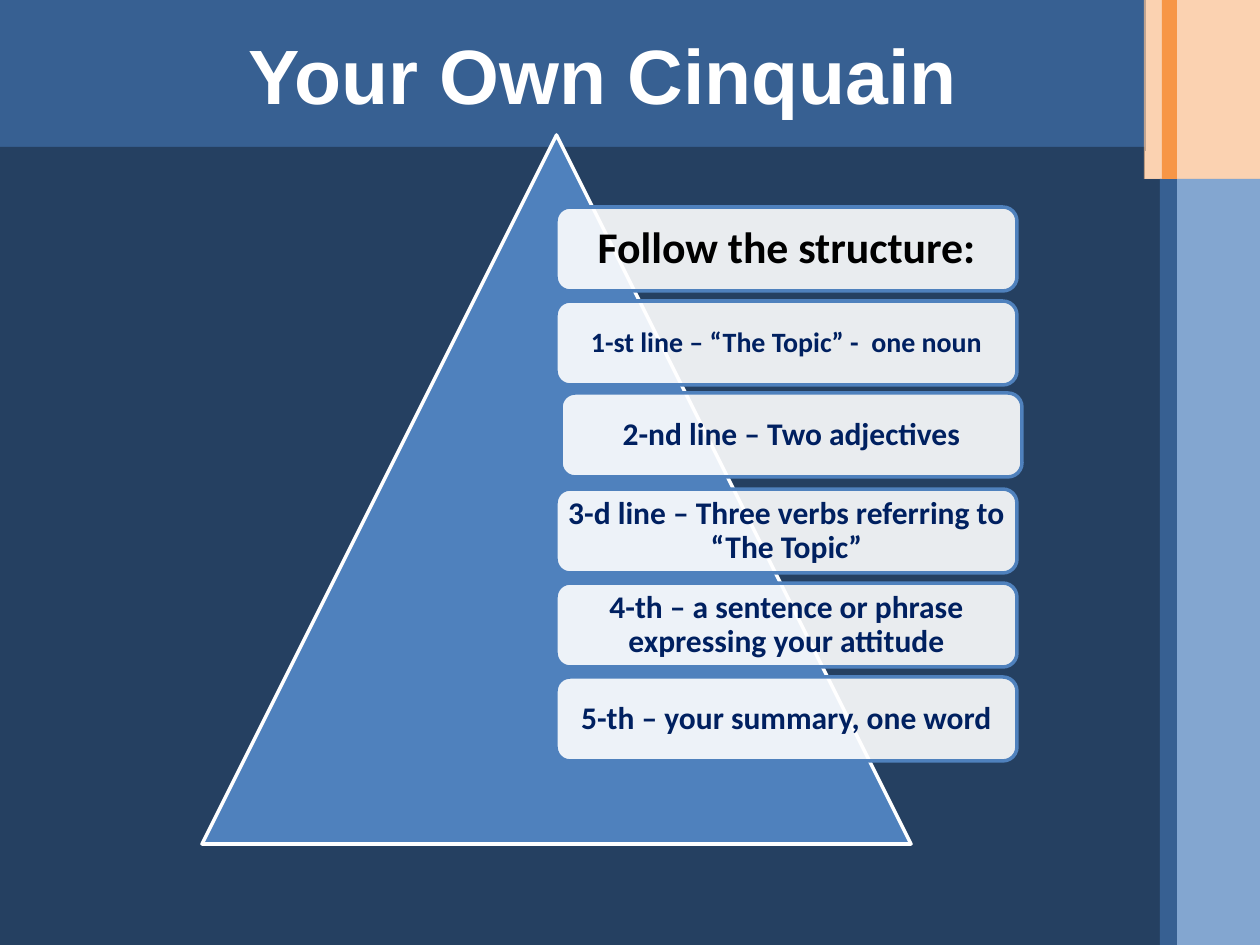
from dataclasses import dataclass

from lxml.etree import SubElement
from pptx import Presentation
from pptx.dml.color import RGBColor
from pptx.enum.shapes import MSO_SHAPE
from pptx.enum.text import MSO_ANCHOR, PP_ALIGN
from pptx.oxml.ns import qn
from pptx.util import Pt

EMU_PER_PX = 914400 / 126


@dataclass(frozen=True)
class Theme:
    navy: str = "254061"
    blue: str = "376092"
    accent: str = "4F81BD"
    peach: str = "FAC090"
    orange: str = "F79646"
    white: str = "FFFFFF"
    black: str = "000000"
    ink: str = "002060"
    title_font: str = "Arial"
    body_font: str = "Calibri"
    title_size: int = 44
    heading_size: int = 25
    body_size: int = 18
    small_size: int = 16
    line_width: int = 2


THEME = Theme()


@dataclass(frozen=True)
class Box:
    left: int
    top: int
    width: int
    height: int

    def emu(self) -> list[int]:
        return [px(v) for v in (self.left, self.top, self.width, self.height)]


@dataclass(frozen=True)
class Panel:
    box: Box
    fill: str
    opacity: int = 100


@dataclass(frozen=True)
class Card:
    text: str
    size: int = THEME.body_size
    color: str = THEME.ink
    dx: int = 0
    dy: int = 0


PANELS = [
    Panel(Box(0, 0, 1146, 151), THEME.blue),
    Panel(Box(0, 147, 1145, 798), THEME.navy),
    Panel(Box(1138, 179, 23, 766), THEME.navy),
    Panel(Box(1144, 0, 116, 179), THEME.peach, 70),
    Panel(Box(1177, 179, 83, 766), THEME.accent, 70),
    Panel(Box(1160, 179, 17, 766), THEME.blue),
    Panel(Box(1162, 0, 15, 179), THEME.orange),
]

TITLE_BOX = Box(63, 0, 1081, 147)
PYRAMID = Box(202, 135, 709, 709)
FIRST_CARD = Box(556, 207, 461, 84)
CARD_PITCH = 94
CARD_INSET = 5

CARDS = [
    Card("Follow the structure:", THEME.heading_size, THEME.black),
    Card("1-st line – “The Topic” -  one noun", THEME.small_size),
    Card("2-nd line – Two adjectives", dx=5, dy=-2),
    Card("3-d line – Three verbs referring to “The Topic”"),
    Card("4-th – a sentence or phrase expressing your attitude"),
    Card("5-th – your summary, one word"),
]


def px(value: int) -> int:
    return round(value * EMU_PER_PX)


def add_filled(slide, kind, box: Box, fill: str, opacity: int = 100, line: str | None = None):
    s = slide.shapes.add_shape(kind, *box.emu())
    s.shadow.inherit = False
    s.fill.solid()
    s.fill.fore_color.rgb = RGBColor.from_string(fill)
    if opacity < 100:
        color = s.fill._xPr.find(f"{qn('a:solidFill')}/{qn('a:srgbClr')}")
        SubElement(color, qn("a:alpha"), val=str(opacity * 1000))
    if line:
        s.line.color.rgb = RGBColor.from_string(line)
        s.line.width = Pt(THEME.line_width)
    else:
        s.line.fill.background()
    return s


def write(s, text: str, *, size: int, color: str, font: str = THEME.body_font,
          inset: int = CARD_INSET, spacing: float = 1.0) -> None:
    """Put bold, centred text in the shape."""
    tf = s.text_frame
    tf.word_wrap = True
    tf.vertical_anchor = MSO_ANCHOR.MIDDLE
    tf.margin_left = tf.margin_right = tf.margin_top = tf.margin_bottom = px(inset)
    p = tf.paragraphs[0]
    p.alignment = PP_ALIGN.CENTER
    p.line_spacing = spacing
    r = p.add_run()
    r.text = text
    r.font.name = font
    r.font.size = Pt(size)
    r.font.bold = True
    r.font.color.rgb = RGBColor.from_string(color)


def add_card(slide, index: int, card: Card) -> None:
    box = Box(FIRST_CARD.left + card.dx,
              FIRST_CARD.top + index * CARD_PITCH + card.dy,
              FIRST_CARD.width, FIRST_CARD.height)
    s = add_filled(slide, MSO_SHAPE.ROUNDED_RECTANGLE, box, THEME.white, 90, THEME.accent)
    write(s, card.text, size=card.size, color=card.color, spacing=0.9)


def main() -> None:
    prs = Presentation()
    prs.slide_width, prs.slide_height = px(1260), px(945)
    slide = prs.slides.add_slide(prs.slide_layouts[6])

    for panel in PANELS:
        add_filled(slide, MSO_SHAPE.RECTANGLE, panel.box, panel.fill, panel.opacity)

    title = slide.shapes.add_textbox(*TITLE_BOX.emu())
    write(title, "Your Own Cinquain", size=THEME.title_size, color=THEME.white,
          font=THEME.title_font)

    add_filled(slide, MSO_SHAPE.ISOSCELES_TRIANGLE, PYRAMID, THEME.accent, line=THEME.white)
    for index, card in enumerate(CARDS):
        add_card(slide, index, card)

    prs.save("out.pptx")


if __name__ == "__main__":
    main()
